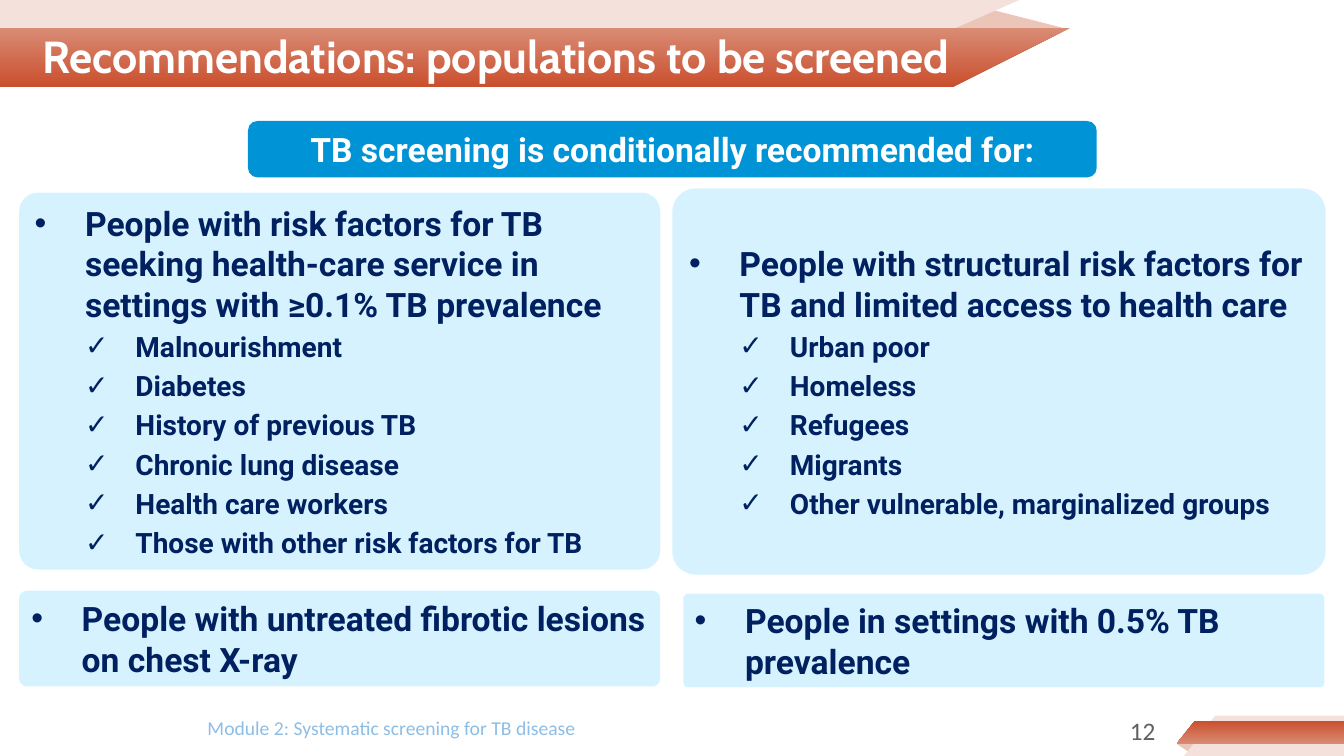
from lxml.etree import SubElement
from pptx import Presentation
from pptx.dml.color import RGBColor
from pptx.enum.shapes import MSO_SHAPE
from pptx.enum.text import MSO_ANCHOR, PP_ALIGN
from pptx.oxml.ns import qn
from pptx.util import Inches, Pt

THEME = {
    "white": "FFFFFF", "navy": "002060", "sky": "0093D5", "ice": "AFE7FF",
    "grey": "606060", "haze": "8DBEE6", "pale": "F5E1DB", "fold": "ECC5B9",
    "dark": "CA4F2E", "light": "D98B74",
    "title": ("Cabin", 32), "head": ("Roboto", 24), "item": ("Roboto", 20),
    "foot": ("Calibri", 14), "page": ("Calibri", 18),
}

deck = Presentation()
deck.slide_width, deck.slide_height = Inches(13.33), Inches(7.5)
slide = deck.slides.add_slide(deck.slide_layouts[6])
shapes = slide.shapes
# One grid step is a hundredth of the slide's width or height
COL, ROW = deck.slide_width / 100, deck.slide_height / 100


def rgb(name):
    return RGBColor.from_string(THEME[name])


def write(shape, lines, hue, bold=True, align=PP_ALIGN.LEFT, anchor=MSO_ANCHOR.MIDDLE):
    """Fill a shape with (text, style, bullet, level) lines."""
    frame = shape.text_frame
    frame.word_wrap, frame.vertical_anchor = True, anchor
    for n, (text, style, mark, level) in enumerate(lines):
        para = frame.paragraphs[0] if n == 0 else frame.add_paragraph()
        para.alignment = align
        if mark:
            para.level = level
            para.space_before, para.space_after = Pt(2 if n else 0), Pt(2)
            props = para._p.get_or_add_pPr()
            props.set("marL", str(Inches(0.5 * (level + 1))))
            props.set("indent", str(-Inches(0.5)))
            SubElement(props, qn("a:buFont"), typeface="Arial")
            SubElement(props, qn("a:buChar"), char=mark)
        run = para.add_run()
        run.text = text
        face, size = THEME[style]
        for key, value in {"name": face, "size": Pt(size), "bold": bold}.items():
            setattr(run.font, key, value)
        run.font.color.rgb = rgb(hue)


# Ribbons in the top and bottom corners: fill from top to bottom, outline
ribbons = [
    (("fold",), [(70.75, 3.87), (73.6, 1.2), (79.5, 3.87)]),
    (("pale",), [(0, 0), (75.85, 0), (61.1, 11.47), (0, 11.47)]),
    (("light", "dark"), [(0, 3.73), (79.6, 3.73), (70.9, 11.47), (0, 11.47)]),
    (("fold",), [(87.55, 98.4), (88.9, 98.4), (88.45, 99.47)]),
    (("pale",), [(88.1, 100), (90.4, 94.67), (100, 94.67), (100, 100)]),
    (("dark", "light"), [(87.55, 98.4), (88.9, 95.33), (100, 95.33), (100, 98.4)]),
]
for hues, points in ribbons:
    first, *rest = [(round(x * COL), round(y * ROW)) for x, y in points]
    pen = shapes.build_freeform(*first)
    pen.add_line_segments(rest)
    band = pen.convert_to_shape()
    band.shadow.inherit = False
    band.line.fill.background()
    if len(hues) == 1:
        band.fill.solid()
        band.fill.fore_color.rgb = rgb(hues[0])
    else:
        band.fill.gradient()
        band.fill.gradient_angle = 270
        for stop, hue in zip(band.fill.gradient_stops, hues):
            stop.color.rgb = rgb(hue)

# Title, footer and page number
labels = [
    ((2.4, 1.47, 70.65, 11.87), "Recommendations: populations to be screened",
     "title", "white", True, PP_ALIGN.LEFT, MSO_ANCHOR.MIDDLE),
    ((14.7, 94, 60.2, 5.33), "Module 2: Systematic screening for TB disease",
     "foot", "haze", False, PP_ALIGN.LEFT, MSO_ANCHOR.TOP),
    ((76, 94, 10.7, 5.33), "12",
     "page", "grey", False, PP_ALIGN.RIGHT, MSO_ANCHOR.TOP),
]
for (x, y, w, h), text, style, *look in labels:
    box = shapes.add_textbox(*map(round, (x * COL, y * ROW, w * COL, h * ROW)))
    write(box, [(text, style, None, 0)], *look)

# Banner and the four population cards: place, corner, fill, opacity, head, items
cards = [
    ((18.45, 16, 63.15, 7.47), 0.17, "sky", 100,
     "TB screening is conditionally recommended for:", []),
    ((1.43, 25.47, 47.7, 49.87), 0.05, "ice", 50,
     "People with risk factors for TB seeking health-care service in "
     "settings with ≥0.1% TB prevalence",
     ["Malnourishment", "Diabetes", "History of previous TB",
      "Chronic lung disease", "Health care workers",
      "Those with other risk factors for TB"]),
    ((50.03, 24.93, 48.6, 51.07), 0.06, "ice", 50,
     "People with structural risk factors for TB and limited access to health care",
     ["Urban poor", "Homeless", "Refugees", "Migrants",
      "Other vulnerable, marginalized groups"]),
    ((1.43, 78.13, 47.7, 12.67), 0.08, "ice", 50,
     "People with untreated fibrotic lesions on chest X-ray", []),
    ((50.85, 78.53, 47.7, 12.4), 0.05, "ice", 50,
     "People in settings with 0.5% TB prevalence", []),
]
for (x, y, w, h), bend, hue, alpha, head, items in cards:
    card = shapes.add_shape(MSO_SHAPE.ROUNDED_RECTANGLE,
                            *map(round, (x * COL, y * ROW, w * COL, h * ROW)))
    card.adjustments[0] = bend
    card.shadow.inherit = False
    card.line.fill.background()
    card.fill.solid()
    card.fill.fore_color.rgb = rgb(hue)
    if alpha == 100:
        write(card, [(head, "head", None, 0)], "white", align=PP_ALIGN.CENTER)
    else:
        tint = card._element.spPr.find(qn("a:solidFill"))[0]
        SubElement(tint, qn("a:alpha"), val=str(alpha * 1000))
        write(card, [(head, "head", "•", 0)]
              + [(item, "item", "✓", 1) for item in items], "navy")

deck.save("out.pptx")
